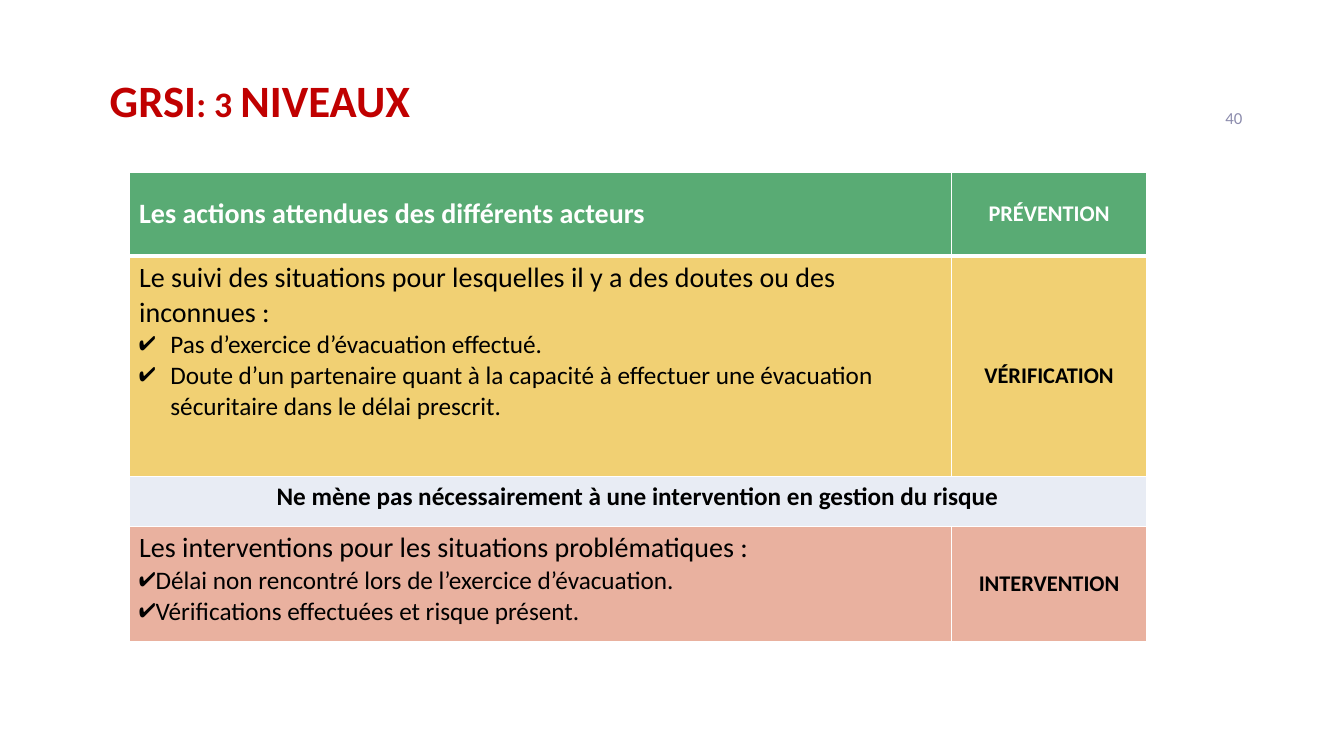
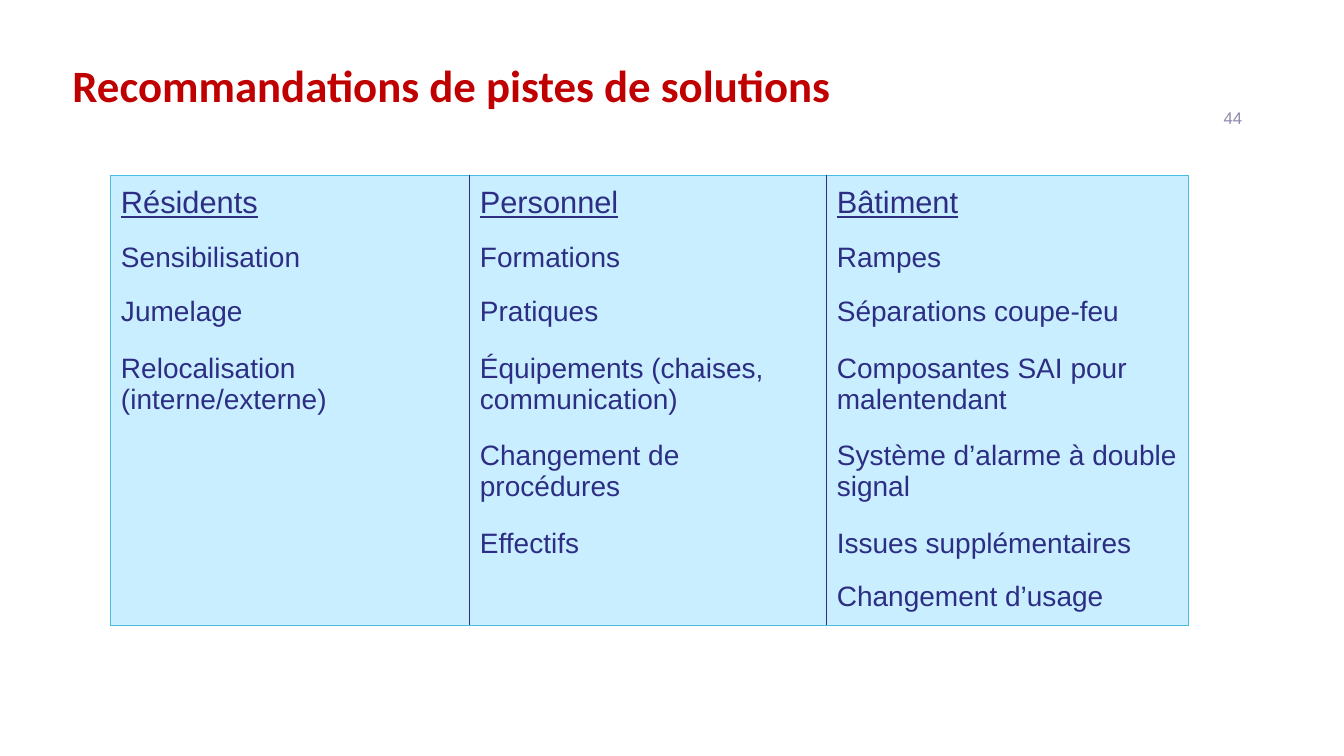
from dataclasses import dataclass, field
from typing import Any

from lxml.etree import SubElement
from pptx import Presentation
from pptx.dml.color import RGBColor
from pptx.enum.text import MSO_ANCHOR as Anchor, PP_ALIGN as Align
from pptx.oxml.ns import qn
from pptx.util import Inches, Pt

RED = RGBColor(0xC0, 0x00, 0x00)
GREY = RGBColor(0x8C, 0x8C, 0xAD)
WHITE = RGBColor(0xFF, 0xFF, 0xFF)
BLACK = RGBColor(0x00, 0x00, 0x00)
GREEN = RGBColor(0x59, 0xAB, 0x74)
YELLOW = RGBColor(0xF1, 0xD0, 0x73)
PALE = RGBColor(0xE8, 0xEC, 0xF4)
PINK = RGBColor(0xE9, 0xB1, 0x9F)
SKY = RGBColor(0xC8, 0xEE, 0xFF)
CYAN = RGBColor(0x48, 0xBE, 0xDE)
NAVY = RGBColor(0x2D, 0x2E, 0x83)
SANS, BODY = "Arial", "Calibri"


@dataclass
class Line:
    color: RGBColor
    width: float


@dataclass
class Level:
    """One row of the levels table."""
    height: float
    fill: RGBColor
    head: str
    label: str = ""
    points: list[str] = field(default_factory=list)
    indent: float = 0
    color: RGBColor = BLACK
    bold: bool = False
    top: float = 0.05


# Text
def write(frame: Any, text: str, *, size: float, color: RGBColor,
          font: str = BODY, bold: bool = False, under: bool = False,
          small: bool = False, align: Any = Align.LEFT,
          space: float | None = None, tick: bool = False,
          indent: float = 0) -> None:
    """Write one paragraph after any text already in the frame."""
    para = frame.add_paragraph() if frame.text else frame.paragraphs[0]
    para.alignment = align
    if space:
        para.line_spacing = space
    if tick:
        props = para._p.get_or_add_pPr()
        props.set("marL", str(Inches(indent)))
        props.set("indent", str(-Inches(indent)))
        tint = SubElement(props, qn("a:buClr"))
        SubElement(tint, qn("a:srgbClr"), val=str(BLACK))
        SubElement(props, qn("a:buChar"), char="✔")
    run = para.add_run()
    run.text = text
    face = run.font
    face.name, face.size, face.bold = font, Pt(size), bold
    face.underline = under
    face.color.rgb = color
    if small:
        run._r.get_or_add_rPr().set("cap", "small")


def label(slide: Any, text: str, left: float, top: float, width: float,
          height: float, anchor: Any = Anchor.MIDDLE, **form: Any) -> None:
    box = slide.shapes.add_textbox(Inches(left), Inches(top),
                                   Inches(width), Inches(height))
    frame = box.text_frame
    frame.word_wrap = True
    frame.vertical_anchor = anchor
    write(frame, text, **form)


def title(slide: Any, text: str, *place: float, **form: Any) -> None:
    label(slide, text, *place, size=32, color=RED, bold=True, **form)


def number(slide: Any, text: str, font: str) -> None:
    label(slide, text, 9.42, 0.97, 3, 0.4, size=12, color=GREY, font=font,
          align=Align.RIGHT)


# Tables
def grid(slide: Any, left: float, top: float, cols: list[float],
         rows: list[float]) -> Any:
    table = slide.shapes.add_table(
        len(rows), len(cols), Inches(left), Inches(top),
        Inches(sum(cols)), Inches(sum(rows))).table
    table.first_row = table.horz_banding = False
    for col, width in zip(table.columns, cols):
        col.width = Inches(width)
    for row, height in zip(table.rows, rows):
        row.height = Inches(height)
    return table


def style(cell: Any, fill: RGBColor, left: Line | None, right: Line | None,
          top: Line | None, bottom: Line | None) -> None:
    props = cell._tc.get_or_add_tcPr()
    for side, line in zip("LRTB", (left, right, top, bottom)):
        edge = SubElement(props, qn(f"a:ln{side}"))
        if line:
            edge.set("w", str(Pt(line.width)))
            paint = SubElement(edge, qn("a:solidFill"))
            SubElement(paint, qn("a:srgbClr"), val=str(line.color))
        else:
            SubElement(edge, qn("a:noFill"))
    cell.fill.solid()
    cell.fill.fore_color.rgb = fill


# Slide content
LEVELS = [
    Level(0.83, GREEN, "Les actions attendues des différents acteurs",
          "PRÉVENTION", color=WHITE, bold=True),
    Level(2.19, YELLOW,
          "Le suivi des situations pour lesquelles il y a des doutes ou des "
          "inconnues :", "VÉRIFICATION",
          ["Pas d’exercice d’évacuation effectué.",
           "Doute d’un partenaire quant à la capacité à effectuer une "
           "évacuation sécuritaire dans le délai prescrit."],
          indent=0.31, top=0.24),
    Level(0.49, PALE,
          "Ne mène pas nécessairement à une intervention en gestion du risque",
          bold=True),
    Level(1.15, PINK,
          "Les interventions pour les situations problématiques :",
          "INTERVENTION",
          ["Délai non rencontré lors de l’exercice d’évacuation.",
           "Vérifications effectuées et risque présent."]),
]

PATHS = {
    "Résidents": ["Sensibilisation", "Jumelage",
                  "Relocalisation (interne/externe)"],
    "Personnel": ["Formations", "Pratiques",
                  "Équipements (chaises, communication)",
                  "Changement de procédures", "Effectifs"],
    "Bâtiment": ["Rampes", "Séparations coupe-feu",
                 "Composantes SAI pour malentendant",
                 "Système d’alarme à double signal",
                 "Issues supplémentaires", "Changement d’usage"],
}


def levels(slide: Any) -> None:
    title(slide, "GRSI: 3 NIVEAUX", 0.99, 0.22, 9.16, 1.64,
          small=True, space=0.8)
    number(slide, "40", BODY)
    table = grid(slide, 1.28, 1.71, [8.16, 1.93],
                 [level.height for level in LEVELS])
    thin, thick = Line(WHITE, 1), Line(WHITE, 3)
    for row, level in enumerate(LEVELS):
        main, side = table.cell(row, 0), table.cell(row, 1)
        for cell in (main, side):
            style(cell, level.fill, thin, thin,
                  thick if row == 1 else thin, thick if row == 0 else thin)
        wide = not level.label
        if wide:
            main.merge(side)
        else:
            side.vertical_anchor = Anchor.MIDDLE
            side.margin_top = Inches(level.top)
            write(side.text_frame, level.label, size=16, color=level.color,
                  bold=True, align=Align.CENTER)
        if row == 0:
            main.vertical_anchor = Anchor.MIDDLE
        write(main.text_frame, level.head, size=18 if wide else 20,
              color=level.color, bold=level.bold,
              align=Align.CENTER if wide else Align.LEFT)
        for point in level.points:
            write(main.text_frame, point, size=18, color=BLACK, tick=True,
                  indent=level.indent)


def paths(slide: Any) -> None:
    title(slide, "Recommandations de pistes de solutions",
          0.62, -0.22, 8.57, 1.38, anchor=Anchor.BOTTOM, space=0.9)
    number(slide, "44", SANS)
    rows = [0.51, 0.42, 0.56] + [0.42] * 4
    table = grid(slide, 1.1, 1.74, [3.56, 3.54, 3.59], rows)
    rim, rule = Line(CYAN, 0.75), Line(NAVY, 1)
    last = len(rows) - 1
    for col, (head, items) in enumerate(PATHS.items()):
        texts = [head, *items]
        for row in range(len(rows)):
            cell = table.cell(row, col)
            style(cell, SKY, rule if col else rim,
                  rule if col < len(PATHS) - 1 else rim,
                  rim if row == 0 else None, rim if row == last else None)
            if row < len(texts):
                cell.margin_top = cell.margin_bottom = Inches(0.1)
                write(cell.text_frame, texts[row], font=SANS, color=NAVY,
                      size=20 if row else 22, under=row == 0)


def main() -> None:
    deck = Presentation()
    deck.slide_width, deck.slide_height = Inches(13.33), Inches(7.5)
    for draw in (levels, paths):
        draw(deck.slides.add_slide(deck.slide_layouts[6]))
    deck.save("out.pptx")


if __name__ == "__main__":
    main()
